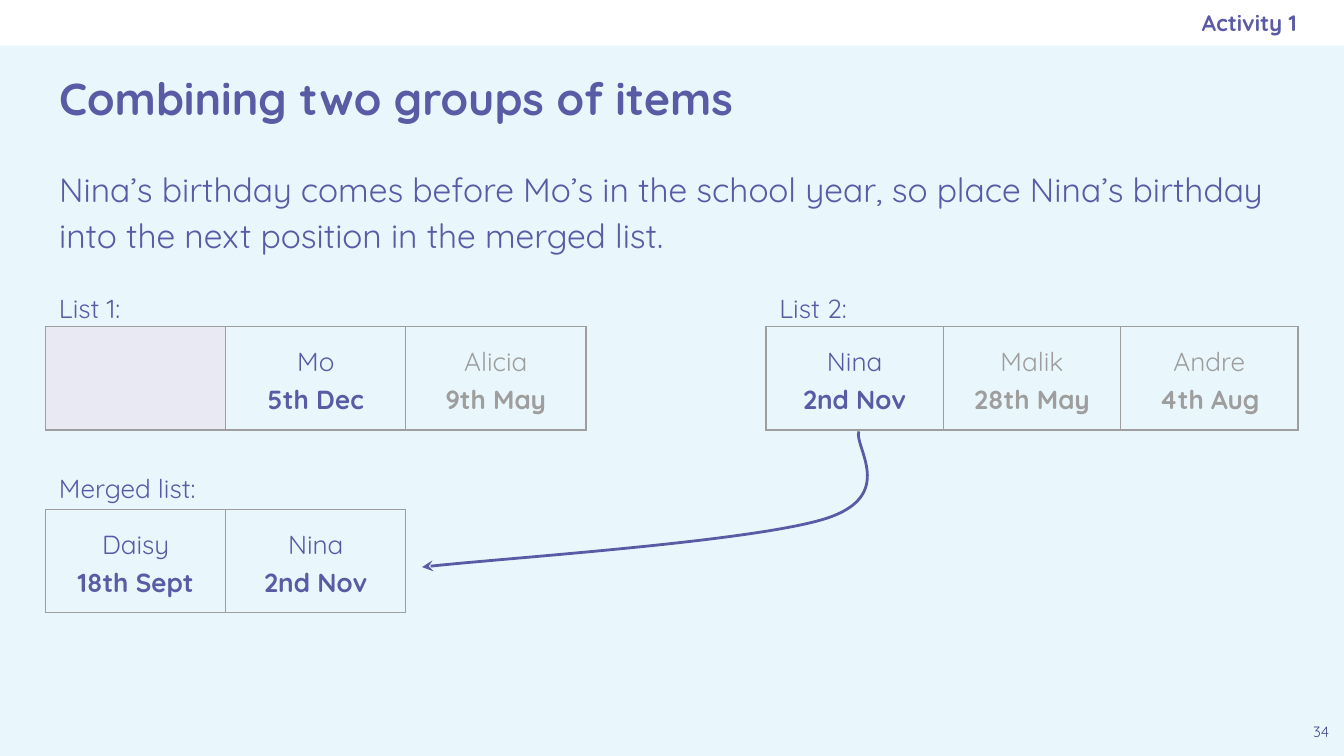
import pptx
import pptx.util
import pptx.dml.color
import pptx.enum.shapes
import pptx.enum.text
import pptx.oxml
import pptx.oxml.ns
from pptx.util import Inches

COLORS = {"bg": "E9F7FC", "bar": "FFFFFF", "ink": "5B5BA5", "number": "494985",
          "grey": "9E9E9E", "used": "E9E9F3"}
FONT = "Quicksand"
ALIGN = pptx.enum.text.PP_ALIGN
ANCHOR = pptx.enum.text.MSO_ANCHOR
LEFT, WIDTH = 0.34, 9.32
ROW_H = 0.77


def rgb(name):
    return pptx.dml.color.RGBColor.from_string(COLORS[name])


def add_xml(parent, xml):
    ns = pptx.oxml.ns.nsdecls("a")
    el = pptx.oxml.parse_xml(xml.replace(">", f" {ns}>", 1))
    parent.append(el)
    return el


def write(p, text, size=14, color="ink", bold=False, align=ALIGN.LEFT,
          spacing=1.0, after=0):
    pPr = p._p.get_or_add_pPr()
    pPr.set("marL", "0")
    pPr.set("indent", "0")
    p.alignment = align
    p.line_spacing = spacing
    p.space_before = pptx.util.Pt(0)
    p.space_after = pptx.util.Pt(after)
    add_xml(pPr, "<a:buNone></a:buNone>")
    r = p.add_run()
    r.text = text
    r.font.name = FONT
    r.font.size = pptx.util.Pt(size)
    r.font.bold = bold
    r.font.color.rgb = rgb(color)


def fill_box(sp, box, text, anchor=ANCHOR.TOP, right=0.1, **fmt):
    sp.left, sp.top, sp.width, sp.height = map(Inches, box)
    tf = sp.text_frame
    tf.word_wrap = True
    tf.auto_size = pptx.enum.text.MSO_AUTO_SIZE.NONE
    tf.vertical_anchor = anchor
    tf.margin_left = tf.margin_top = tf.margin_bottom = Inches(0.1)
    tf.margin_right = Inches(right)
    write(tf.paragraphs[0], text, **fmt)


def add_text(s, box, text, **fmt):
    fill_box(s.shapes.add_textbox(0, 0, 0, 0), box, text, **fmt)


def add_header(s, box, text):
    x, y, w, h = box
    bar = s.shapes.add_shape(pptx.enum.shapes.MSO_SHAPE.RECTANGLE, *map(Inches, box))
    bar.shadow.inherit = False
    bar.fill.solid()
    bar.fill.fore_color.rgb = rgb("bar")
    bar.line.fill.background()
    add_text(s, (x + w - 4.25, y, 3.9, h), text, anchor=ANCHOR.MIDDLE, right=0,
             size=12, bold=True, align=ALIGN.RIGHT)


def set_borders(cell, sides):
    tcPr = cell._tc.get_or_add_tcPr()
    for side in "LRTB":
        paint = (f'<a:solidFill><a:srgbClr val="{COLORS["grey"]}"/></a:solidFill>'
                 if side in sides else "<a:noFill/>")
        add_xml(tcPr, f'<a:ln{side} w="9525">{paint}</a:ln{side}>')


def add_list_table(s, box, widths, items):
    """Items are (name, date, colour), "used" for a taken item, None for a gap."""
    shape = s.shapes.add_table(1, len(items), *map(Inches, box))
    table = shape.table
    table.first_row = table.horz_banding = False
    table.rows[0].height = Inches(box[3])
    for i, (width, item) in enumerate(zip(widths, items)):
        table.columns[i].width = Inches(width)
        cell = table.cell(0, i)
        cell.vertical_anchor = ANCHOR.MIDDLE
        cell.margin_left = cell.margin_right = Inches(0.1)
        cell.margin_top = cell.margin_bottom = Inches(0.1)
        set_borders(cell, "LRTB" if item else "LR")
        if item == "used":
            cell.fill.solid()
            cell.fill.fore_color.rgb = rgb("used")
            continue
        cell.fill.background()
        if item:
            name, date, color = item
            tf = cell.text_frame
            fmt = dict(color=color, align=ALIGN.CENTER, spacing=1.15)
            write(tf.paragraphs[0], name, **fmt)
            write(tf.add_paragraph(), date, bold=True, **fmt)


def add_curved_arrow(s, start, curves, width):
    """Draw cubic curves, each given as two control points and an end."""
    points = [tuple(map(Inches, pt)) for curve in curves for pt in curve]
    builder = s.shapes.build_freeform(*map(Inches, start))
    builder.add_line_segments(points, close=False)
    sp = builder.convert_to_shape()
    path = sp._element.find(".//" + pptx.oxml.ns.qn("a:path"))
    lines = path.findall(pptx.oxml.ns.qn("a:lnTo"))
    for i in range(0, len(lines), 3):
        bezier = add_xml(path, "<a:cubicBezTo></a:cubicBezTo>")
        for line in lines[i:i + 3]:
            bezier.append(line[0])
            path.remove(line)
    # Fit the frame to the curve, not to its control points
    sp.width = Inches(width)
    path.set("w", str(sp.width))
    sp.shadow.inherit = False
    sp.fill.background()
    sp.line.color.rgb = rgb("ink")
    sp.line.width = pptx.util.Pt(1.5)
    add_xml(sp.line._get_or_add_ln(), '<a:tailEnd type="stealth"></a:tailEnd>')


def add_lists(s, box):
    x, y, w, h = box
    wide, narrow = 1.34, 1.32
    label = dict(spacing=1.15, after=16)
    # Source lists, side by side with a gap column
    add_text(s, (x, y, 1.4, 0.42), "List 1:", **label)
    add_text(s, (x + 4 * wide, y, 1.4, 0.42), "List 2:", **label)
    add_list_table(s, (x, y + 0.39, w, ROW_H), [wide] * 4 + [narrow] * 3, [
        "used", ("Mo", "5th Dec", "ink"), ("Alicia", "9th May", "grey"), None,
        ("Nina", "2nd Nov", "ink"), ("Malik", "28th May", "grey"),
        ("Andre", "4th Aug", "grey")])
    # Merged list
    add_text(s, (x, y + 1.34, 1.4, 0.42), "Merged list:", **label)
    add_list_table(s, (x, y + 1.75, 2 * wide, ROW_H), [wide] * 2, [
        ("Daisy", "18th Sept", "ink"), ("Nina", "2nd Nov", "ink")])
    # Move from list 2 to the merged list
    curves = [[(6.01, 1.28), (6.34, 1.65), (5.8, 1.82)],
              [(5.26, 1.99), (3.3, 2.12), (2.8, 2.18)]]
    add_curved_arrow(s, (x + 6.05, y + 1.17),
                     [[(x + a, y + b) for a, b in c] for c in curves], 3.32)


def main():
    prs = pptx.Presentation()
    prs.slide_width = Inches(10)
    prs.slide_height = prs.slide_width * 9 // 16
    s = prs.slides.add_slide(prs.slide_layouts[1])
    s.background.fill.solid()
    s.background.fill.fore_color.rgb = rgb("bg")

    add_header(s, (0, 0, 10, 0.34), "Activity 1")
    # Title and explanation
    fill_box(s.shapes.title, (LEFT, 0.34, WIDTH, 0.77),
             "Combining two groups of items", anchor=ANCHOR.MIDDLE, size=24, bold=True)
    fill_box(s.placeholders[1], (LEFT, 1.11, WIDTH, 0.92),
             "Nina’s birthday comes before Mo’s in the school year, so place Nina’s "
             "birthday into the next position in the merged list.",
             size=18, spacing=1.15, after=16)
    add_lists(s, (LEFT, 2.04, WIDTH, 2.52))
    # Slide number
    add_text(s, (9.66, 5.28, 0.34, 0.34), "34", size=8, color="number",
             align=ALIGN.CENTER)
    prs.save("out.pptx")


if __name__ == "__main__":
    main()
